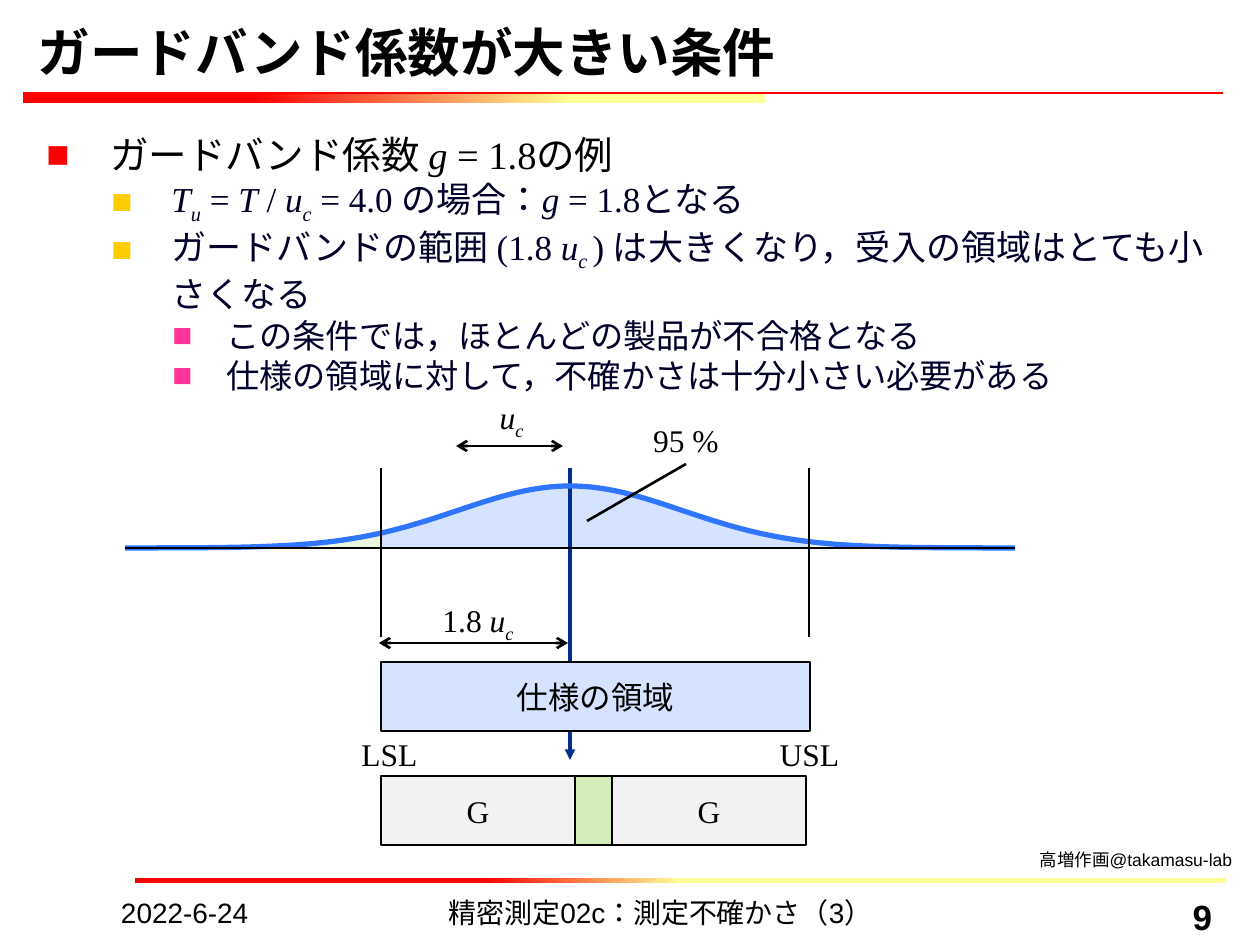
"""Build the slide on conditions that give a large guard band factor."""
import math

import pptx
import pptx.dml.color
import pptx.enum.dml
import pptx.enum.lang
import pptx.enum.shapes
import pptx.enum.text
import pptx.oxml
import pptx.oxml.ns
import pptx.util

PIXEL = 914400 / 126
COLORS = {
    "black": "000000", "body": "00002A", "red": "FF0000", "yellow": "FFFF99",
    "gold": "FFCC00", "pink": "FF3399", "navy": "002E89", "curve": "3075FF",
    "spec": "D6E3FF", "tail": "E9F6DC", "accept": "D3ECB9", "guard": "F2F2F2",
}
SANS, SERIF = "Arial", "Times New Roman"
CENTER, BASELINE, PEAK, SIGMA = 570, 548, 62, 112
LOWER, UPPER = 381, 809
ALIGN = pptx.enum.text.PP_ALIGN
ANCHOR = pptx.enum.text.MSO_ANCHOR
BULLETS = [("red", 64, 64), ("gold", 125, 60), ("pink", 180, 54)]
BODY = [
    (0, 22, "black", [("ガードバンド係数 ", ""), ("g", "i"), (" = 1.8の例", "")]),
    (1, 20, "body", [("T", "i"), ("u", "s"), (" = ", ""), ("T", "i"), (" / ", ""), ("u", "i"),
                     ("c", "s"), (" = 4.0 の場合：", ""), ("g", "i"), (" = 1.8となる", "")]),
    (1, 20, "body", [("ガードバンドの範囲 (1.8 ", ""), ("u", "i"), ("c ", "s"),
                     (") は大きくなり，受入の領域はとても小さくなる", "")]),
    (2, 19, "body", [("この条件では，ほとんどの製品が不合格となる", "")]),
    (2, 19, "body", [("仕様の領域に対して，不確かさは十分小さい必要がある", "")]),
]


def px(value):
    """Turn pixels into EMU."""
    return pptx.util.Emu(round(value * PIXEL))


def rgb(name):
    """Look up a colour by name."""
    return pptx.dml.color.RGBColor.from_string(COLORS[name])


def add_xml(parent, tag, **attributes):
    """Append a DrawingML element to a parent."""
    element = pptx.oxml.parse_xml(f"<a:{tag} {pptx.oxml.ns.nsdecls('a')}/>")
    for name, value in attributes.items():
        element.set(name, value)
    parent.append(element)
    return element


def write(paragraph, runs, size=18, font=SERIF, color="black", bold=False, align=ALIGN.LEFT):
    """Write runs marked plain, italic (i) or italic subscript (s)."""
    paragraph.alignment = align
    for text, style in [(runs, "")] if isinstance(runs, str) else runs:
        run = paragraph.add_run()
        run.text = text
        run.font.name, run.font.size = font, pptx.util.Pt(size)
        run.font.bold, run.font.italic = bold, style != ""
        run.font.color.rgb = rgb(color)
        run.font.language_id = pptx.enum.lang.MSO_LANGUAGE_ID.JAPANESE
        if style == "s":
            run._r.get_or_add_rPr().set("baseline", "-25000")


def add_label(slide, box, runs, inset=5, anchor=ANCHOR.TOP, **style):
    """Add a wrapping text box."""
    shape = slide.shapes.add_textbox(*map(px, box))
    frame = shape.text_frame
    frame.word_wrap, frame.vertical_anchor = True, anchor
    frame.margin_left = frame.margin_right = px(inset)
    frame.margin_top = frame.margin_bottom = px(min(inset, 6))
    write(frame.paragraphs[0], runs, **style)
    return shape


def add_body(slide):
    """Add the bulleted text."""
    frame = slide.shapes.add_textbox(*map(px, (34, 125, 1191, 270))).text_frame
    frame.word_wrap = True
    for index, (level, size, color, runs) in enumerate(BODY):
        paragraph = frame.add_paragraph() if index else frame.paragraphs[0]
        paragraph.level = level
        bullet_color, margin, hanging = BULLETS[level]
        properties = paragraph._p.get_or_add_pPr()
        properties.set("marL", str(px(margin)))
        properties.set("indent", str(-px(hanging)))
        add_xml(add_xml(properties, "buClr"), "srgbClr", val=COLORS[bullet_color])
        add_xml(properties, "buFont", typeface=SANS)
        add_xml(properties, "buChar", char="■")
        write(paragraph, runs, size=size, color=color)


def add_box(slide, box, color, text="", font=SERIF):
    """Add an outlined rectangle with centred text."""
    shape = slide.shapes.add_shape(pptx.enum.shapes.MSO_SHAPE.RECTANGLE, *map(px, box))
    shape.shadow.inherit = False
    shape.fill.solid()
    shape.fill.fore_color.rgb = rgb(color)
    shape.line.color.rgb, shape.line.width = rgb("black"), pptx.util.Pt(1.5)
    if text:
        frame = shape.text_frame
        frame.word_wrap, frame.vertical_anchor = False, ANCHOR.MIDDLE
        write(frame.paragraphs[0], text, font=font, align=ALIGN.CENTER)


def add_gradient_bar(slide, box, red_end, yellow_start):
    """Add a bar that runs from red to yellow."""
    shape = slide.shapes.add_shape(pptx.enum.shapes.MSO_SHAPE.RECTANGLE, *map(px, box))
    shape.shadow.inherit = False
    shape.line.fill.background()
    shape.fill.gradient()
    shape.fill.gradient_angle = 0
    stops = [("red", red_end), ("yellow", yellow_start)]
    for stop, (color, position) in zip(shape.fill.gradient_stops, stops):
        stop.color.rgb, stop.position = rgb(color), position


def add_line(slide, start, end, color="black", width=1.5, head=None, tail=None):
    """Add a straight line with optional arrowheads."""
    connector = slide.shapes.add_connector(
        pptx.enum.shapes.MSO_CONNECTOR.STRAIGHT, *map(px, start + end))
    connector.line.color.rgb, connector.line.width = rgb(color), pptx.util.Pt(width)
    for tag, kind in (("headEnd", head), ("tailEnd", tail)):
        if kind:
            add_xml(connector.line._get_or_add_ln(), tag, type=kind)
    add_xml(connector._element.spPr, "effectLst")
    return connector


def add_bell(slide, left, right, fill=None):
    """Add a stretch of the normal curve, as a filled area or as a line."""
    xs = [*range(left, right, 5), right]
    points = [(x, BASELINE - PEAK * math.exp(-((x - CENTER) / SIGMA) ** 2 / 2)) for x in xs]
    if fill:
        points += [(right, BASELINE), (left, BASELINE)]
    points = [(px(x), px(y)) for x, y in points]
    builder = slide.shapes.build_freeform(*points[0], scale=1.0)
    builder.add_line_segments(points[1:], close=bool(fill))
    shape = builder.convert_to_shape()
    shape.shadow.inherit = False
    if fill:
        shape.fill.solid()
        shape.fill.fore_color.rgb = rgb(fill)
        shape.line.fill.background()
    else:
        shape.fill.background()
        shape.line.color.rgb, shape.line.width = rgb("curve"), pptx.util.Pt(3)


def add_frame(slide):
    """Add the title, the footer and their bars."""
    add_gradient_bar(slide, (23, 93, 742, 10), 0.31, 0.74)
    add_line(slide, (23, 93), (1223, 93), "red", 0.75)
    add_gradient_bar(slide, (135, 878, 1091, 5), 0.32, 0.5)
    add_label(slide, (25, 26, 1201, 63), "ガードバンド係数が大きい条件", inset=13,
              anchor=ANCHOR.BOTTOM, size=30, font=SANS, bold=True)
    add_label(slide, (108, 890, 273, 37), "2022-6-24", inset=13, size=16, font=SANS)
    add_label(slide, (333, 890, 655, 37), "精密測定02c：測定不確かさ（3）", inset=13,
              size=16, font=SANS, align=ALIGN.CENTER)
    add_label(slide, (1017, 890, 208, 37), "9", inset=13, size=20, font=SANS, bold=True,
              align=ALIGN.RIGHT)
    add_label(slide, (1035, 844, 225, 32), "高増作画@takamasu-lab", size=10, font=SANS)


def add_diagram(slide):
    """Add the distribution, the specification zone and the guard bands."""
    for left, right, fill in ((276, LOWER, "tail"), (LOWER, UPPER, "spec"), (UPPER, 914, "tail")):
        add_bell(slide, left, right, fill)
    add_line(slide, (CENTER, 468), (CENTER, 760), "navy", 2, tail="triangle")
    add_bell(slide, 125, 1015)
    add_line(slide, (1015, BASELINE), (125, BASELINE))
    for limit in (LOWER, UPPER):
        add_line(slide, (limit, 468), (limit, 637))
    add_box(slide, (LOWER, 662, 429, 69), "spec", "仕様の領域", SANS)
    add_box(slide, (384, 776, 420, 69), "accept")
    for left in (LOWER, 612):
        add_box(slide, (left, 776, 194, 69), "guard", "G")
    for box, runs in (
        ((319, 730, 141, 48), "LSL"),
        ((739, 730, 141, 48), "USL"),
        ((478, 393, 67, 48), [("u", "i"), ("c", "s")]),
        ((398, 596, 160, 48), [("1.8 ", ""), ("u", "i"), ("c", "s")]),
    ):
        add_label(slide, box, runs, align=ALIGN.CENTER)
    percentage = add_label(slide, (639, 416, 94, 48), "95 %", align=ALIGN.CENTER)
    add_line(slide, (686, 464), (587, 521)).begin_connect(percentage, 2)
    for left, right, y in ((379, 568, 643), (456, 563, 446)):
        add_line(slide, (left, y), (right, y), head="arrow", tail="arrow")


def main():
    """Build and save the presentation."""
    presentation = pptx.Presentation()
    presentation.slide_width, presentation.slide_height = px(1260), px(945)
    slide = presentation.slides.add_slide(presentation.slide_layouts[6])
    add_frame(slide)
    add_body(slide)
    add_diagram(slide)
    presentation.save("out.pptx")


if __name__ == "__main__":
    main()
